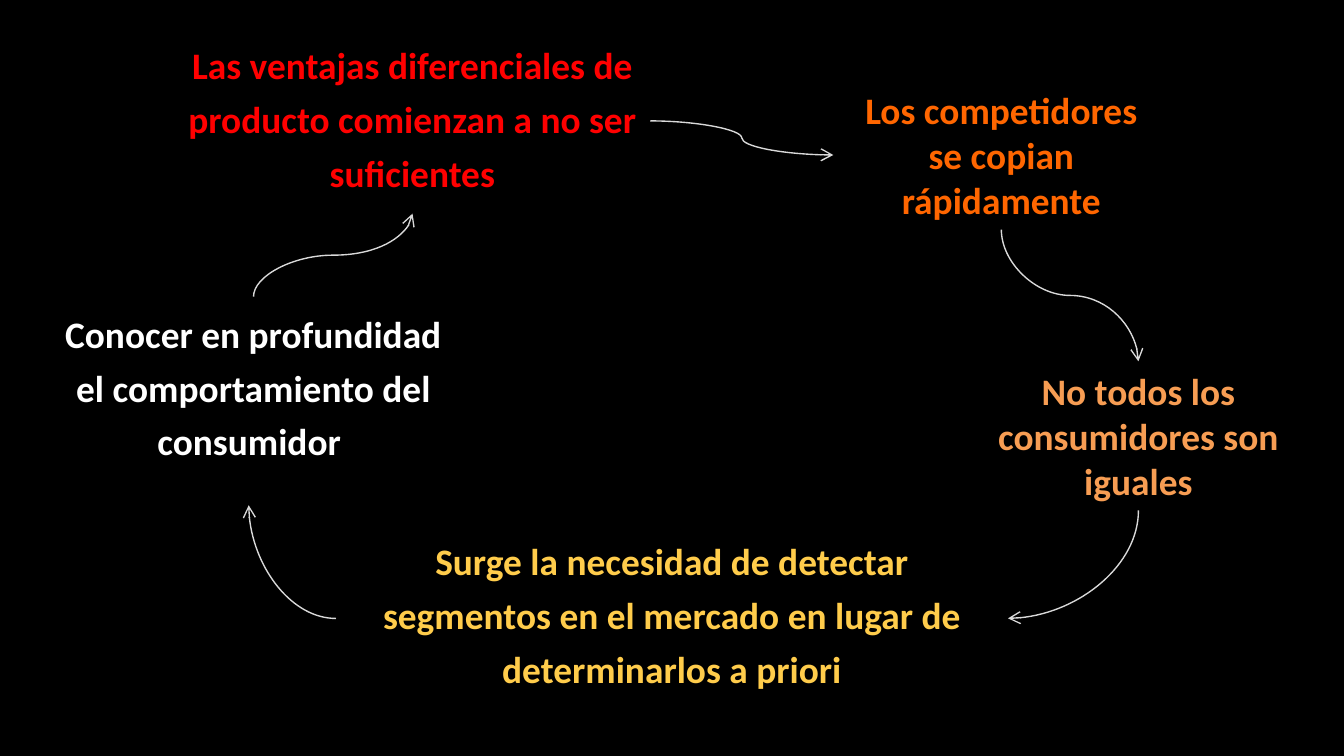
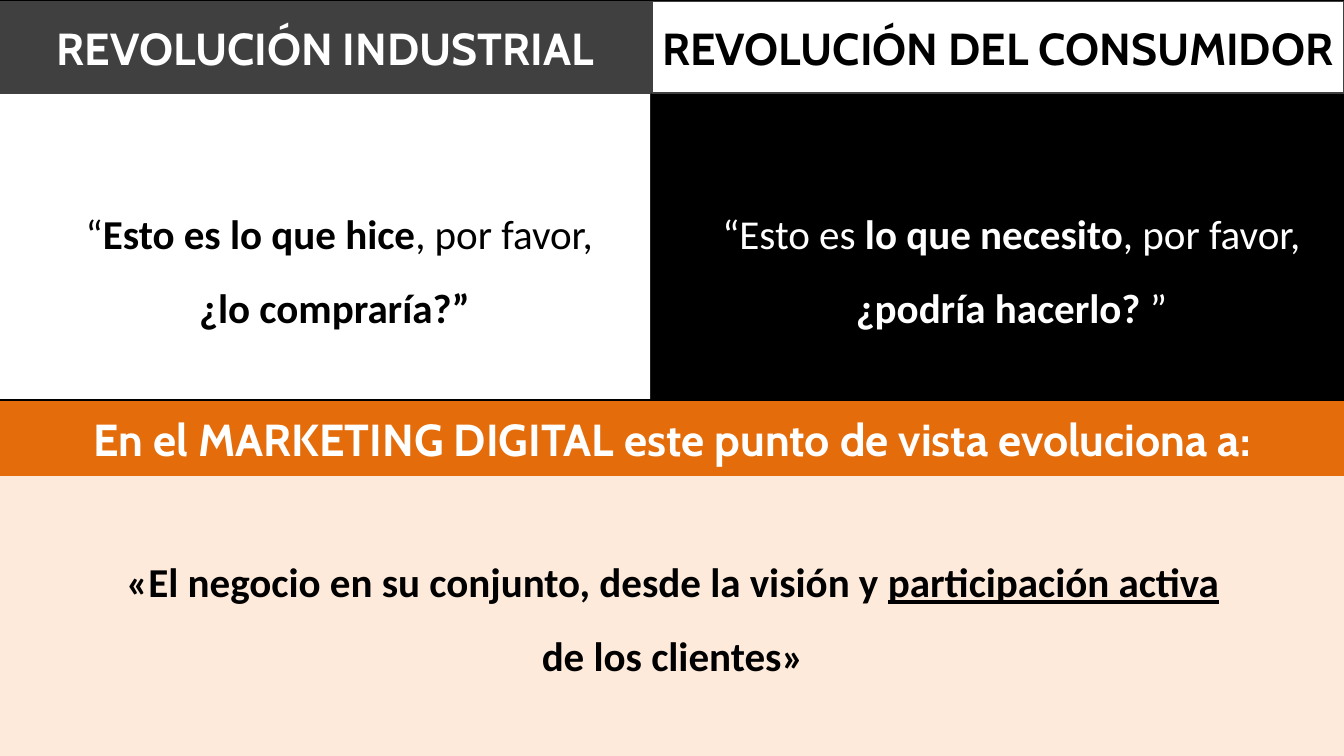
from dataclasses import dataclass

from lxml.etree import SubElement
from pptx import Presentation
from pptx.dml.color import RGBColor
from pptx.enum.shapes import MSO_CONNECTOR as Connector, MSO_SHAPE as Shape
from pptx.enum.text import MSO_ANCHOR as Anchor, MSO_AUTO_SIZE as AutoSize, PP_ALIGN as Align
from pptx.oxml.ns import qn
from pptx.util import Cm, Pt


@dataclass(frozen=True)
class Theme:
    black: str = "000000"
    white: str = "FFFFFF"
    grey: str = "404040"
    arrow: str = "D9D9D9"
    red: str = "FF0000"
    orange: str = "FF6600"
    peach: str = "F79D53"
    yellow: str = "FFCC4B"
    band: str = "E46C0A"
    cream: str = "FDEADA"
    body_font: str = "Calibri"
    head_font: str = "Cabin"
    step_size: int = 20
    quote_size: int = 22
    head_size: int = 24
    line_width: float = 0.75


T = Theme()
W, H = 25.4, 14.29
SPLIT = 12.29
TIGHT = (0.23, 0.1)   # horizontal and vertical text insets
ROOMY = (0.25, 0.13)


def rgb(value):
    return RGBColor.from_string(value)


def assign(target, values):
    for name, value in values.items():
        setattr(target, name, value)


def add_slide(prs):
    s = prs.slides.add_slide(prs.slide_layouts[6])
    s.background.fill.solid()
    s.background.fill.fore_color.rgb = rgb(T.black)
    return s


def write(tf, runs, font, size, color, insets, spacing=None, **frame):
    """Fill a frame with one centred paragraph of (text, marks) runs."""
    x, y = (Cm(v) for v in insets)
    assign(tf, dict(margin_left=x, margin_right=x, margin_top=y, margin_bottom=y, **frame))
    p = tf.paragraphs[0]
    assign(p, dict(alignment=Align.CENTER, line_spacing=spacing))
    for text, marks in runs:
        r = p.add_run()
        r.text = text
        assign(r.font, dict(name=font, size=Pt(size), bold="b" in marks, underline="u" in marks))
        r.font.color.rgb = rgb(color)


def add_text(s, box, runs, size, color, spacing=None, grow=True):
    tf = s.shapes.add_textbox(*map(Cm, box)).text_frame
    write(tf, runs, T.body_font, size, color, ROOMY if grow else TIGHT, spacing,
          word_wrap=True, auto_size=AutoSize.SHAPE_TO_FIT_TEXT if grow else AutoSize.NONE)


def add_panel(s, box, fill, line=None):
    sp = s.shapes.add_shape(Shape.RECTANGLE, *map(Cm, box))
    sp.shadow.inherit = False
    sp.fill.solid()
    sp.fill.fore_color.rgb = rgb(fill)
    if line:
        sp.line.color.rgb = rgb(line)
        sp.line.width = Pt(T.line_width)
    else:
        sp.line.fill.background()
    return sp


def add_heading(s, box, text, fill, line, color):
    sp = add_panel(s, box, fill, line)
    write(sp.text_frame, [(text, "b")], T.head_font, T.head_size, color, TIGHT,
          word_wrap=False, vertical_anchor=Anchor.MIDDLE)


def side(box, name):
    """Middle point of one side of a box."""
    x, y, w, h = box
    return {"left": (x, y + h / 2), "right": (x + w, y + h / 2),
            "top": (x + w / 2, y), "bottom": (x + w / 2, y + h)}[name]


def add_curve(s, start, end, preset, turn=0, flips=()):
    (x1, y1), (x2, y2) = start, end
    w, h = abs(x2 - x1), abs(y2 - y1)
    if turn % 180:  # a quarter turn swaps the sides of the frame
        w, h = h, w
    left, top = (x1 + x2 - w) / 2, (y1 + y2 - h) / 2
    cxn = s.shapes.add_connector(Connector.CURVE, *map(Cm, (left, top, left + w, top + h)))
    cxn.line.color.rgb = rgb(T.arrow)
    cxn.line.width = Pt(T.line_width)
    props = cxn.element.spPr
    props.find(qn("a:prstGeom")).set("prst", preset)
    xfrm = props.find(qn("a:xfrm"))
    xfrm.set("rot", str(turn * 60000))
    for flip in flips:
        xfrm.set(flip, "1")
    SubElement(props.find(qn("a:ln")), qn("a:tailEnd"), type="arrow")
    SubElement(props, qn("a:effectLst"))


def build_cycle(prs):
    s = add_slide(prs)

    # Steps of the cycle
    know = (0.66, 5.61, 8.26, 2.79)
    product = (3.3, 0.53, 8.99, 3.51)
    rivals = (15.75, 1.52, 6.35, 2.82)
    consumers = (18.34, 6.83, 6.35, 2.82)
    segments = (6.35, 9.91, 12.7, 3.56)
    steps = [
        (know, "Conocer en profundidad el comportamiento del consumidor ", T.white, 1.2),
        (product, "Las ventajas diferenciales de producto comienzan a no ser suficientes",
         T.red, 1.2),
        (rivals, "Los competidores se copian rápidamente", T.orange, None),
        (consumers, "No todos los consumidores son iguales", T.peach, None),
        (segments, "Surge la necesidad de detectar segmentos en el mercado "
         "en lugar de determinarlos a priori", T.yellow, 1.2),
    ]
    for box, text, color, spacing in steps:
        add_text(s, box, [(text, "b")], T.step_size, color, spacing, grow=spacing is None)

    # Arrows from step to step
    bend, wave = "curvedConnector2", "curvedConnector3"
    add_curve(s, side(product, "right"), side(rivals, "left"), wave)
    add_curve(s, side(rivals, "bottom"), side(consumers, "top"), wave, 270, ["flipH"])
    add_curve(s, side(consumers, "bottom"), side(segments, "right"), bend, 90)
    add_curve(s, side(segments, "left"), (4.7, 9.55), bend, 180)
    add_curve(s, side(know, "top"), side(product, "bottom"), wave, 90, ["flipH", "flipV"])


def build_comparison(prs):
    s = add_slide(prs)

    # Panels
    add_panel(s, (0, 0.05, SPLIT, 7.49), T.white)
    add_panel(s, (0, 8.99, W, 5.3), T.cream)

    # Headings
    for box, text, fill, line, color in [
        ((0, 0.03, SPLIT, 1.73), "REVOLUCIÓN INDUSTRIAL", T.grey, T.grey, T.white),
        ((12.32, 0.03, 13.08, 1.73), "REVOLUCIÓN DEL CONSUMIDOR", T.white, T.grey, T.black),
        ((0, 7.59, W, 1.4), "En el MARKETING DIGITAL este punto de vista evoluciona a:",
         T.band, T.band, T.white),
    ]:
        add_heading(s, box, text, fill, line, color)

    # Quotes
    for box, color, runs in [
        ((1.17, 3.35, 10.31, 3.07), T.black,
         [(" “", ""), ("Esto es lo que hice", "b"), (", por favor, ", ""),
          ("¿lo compraría?”", "b")]),
        ((13.31, 3.35, 11.61, 3.07), T.white,
         [("“Esto es ", ""), ("lo que necesito", "b"), (", por favor, ", ""),
          ("¿podría hacerlo? ", "b"), ("”", "")]),
        ((2.11, 9.93, 21.21, 3.07), T.black,
         [("«El negocio en su conjunto, desde la visión y ", "b"),
          ("participación activa", "bu"), (" de los clientes»", "b")]),
    ]:
        add_text(s, box, runs, T.quote_size, color, 1.5)


def main():
    prs = Presentation()
    assign(prs, dict(slide_width=Cm(W), slide_height=Cm(H)))
    build_cycle(prs)
    build_comparison(prs)
    prs.save("out.pptx")


if __name__ == "__main__":
    main()
